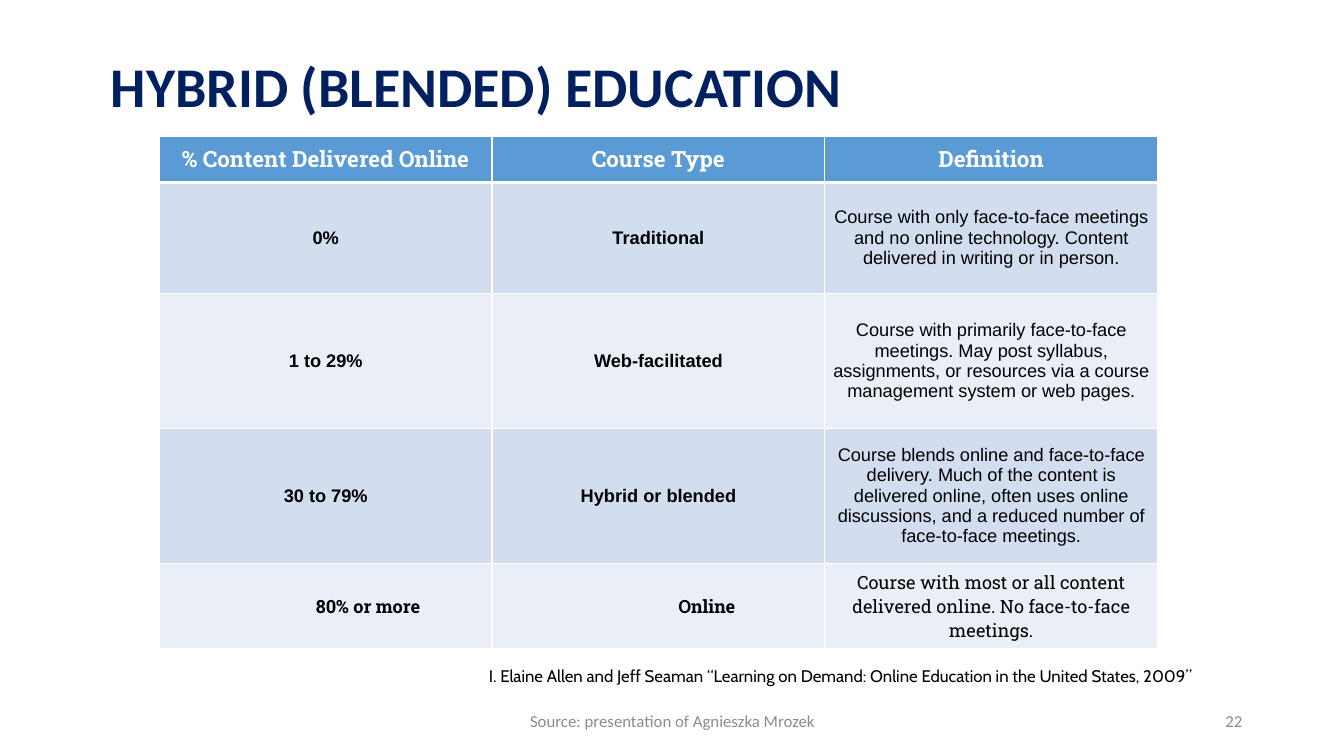
from lxml import etree
from pptx import Presentation
from pptx import util as u
from pptx.dml.color import RGBColor
from pptx.enum import text
from pptx.oxml import ns

WIDTH, HEIGHT = 13.33, 7.5
TITLE = "HYBRID (BLENDED) EDUCATION"
HEADINGS = ("% Content Delivered Online", "Course Type", "Definition")
COURSES = [
    ("0%", "Traditional",
     "Course with only face-to-face meetings and no online technology. "
     "Content delivered in writing or in person."),
    ("1 to 29%", "Web-facilitated",
     "Course with primarily face-to-face meetings. May post syllabus, assignments, "
     "or resources via a course management system or web pages."),
    ("30 to 79%", "Hybrid or blended",
     "Course blends online and face-to-face delivery. Much of the content is delivered "
     "online, often uses online discussions, and a reduced number of face-to-face meetings."),
    ("80% or more", "Online",
     "Course with most or all content delivered online. No face-to-face meetings."),
]
ROW_HEIGHTS = (0.46, 1.1, 1.34, 1.34, 0.85)
COLUMN_WIDTH = 3.3
LAST_ROW_INDENTS = (0.84, 0.96, 0)
CELL_INSET = 0.05
HEADING_FILL, BAND_FILLS = "5B9BD5", ("D2DEEF", "EAEFF7")
LEFT, CENTER, RIGHT = text.PP_ALIGN.LEFT, text.PP_ALIGN.CENTER, text.PP_ALIGN.RIGHT

# words, (left, top, width, height), alignment, font, colour
CITATION = ("I. Elaine Allen and Jeff Seaman “Learning on Demand: "
            "Online Education in the United States, 2009”",
            (4.75, 6.55, 7.67, 0.3), LEFT, "Cabin", "000000")
NUMBER = ("22", (9.42, 6.95, 3, 0.4), RIGHT, "Calibri", "8C8C8C")
SOURCE = ("Source: presentation of Agnieszka Mrozek",
          (4.42, 6.95, 4.5, 0.4), CENTER, "Calibri", "8C8C8C")


def rgb(code):
    return RGBColor.from_string(code)


def inches(box):
    return [u.Inches(length) for length in box]


def write(frame, words, align, font, size, color, bold=False):
    frame.word_wrap = True
    frame.vertical_anchor = text.MSO_ANCHOR.MIDDLE
    paragraph = frame.paragraphs[0]
    paragraph.alignment = align
    run = paragraph.add_run()
    run.text = words
    for name, value in dict(name=font, size=u.Pt(size), bold=bold).items():
        setattr(run.font, name, value)
    run.font.color.rgb = rgb(color)


def border(cell, bottom):
    """Draw white cell borders, 1 pt except for the bottom one."""
    properties = cell._tc.get_or_add_tcPr()
    sides = {"lnL": 1, "lnR": 1, "lnT": 1, "lnB": bottom}
    for place, (side, points) in enumerate(sides.items()):
        line = etree.Element(ns.qn("a:" + side), w=str(u.Pt(points)))
        fill = etree.SubElement(line, ns.qn("a:solidFill"))
        etree.SubElement(fill, ns.qn("a:srgbClr"), val="FFFFFF")
        properties.insert(place, line)


def add_course_table(slide):
    rows = [HEADINGS, *COURSES]
    last = len(rows) - 1
    size = (COLUMN_WIDTH * len(HEADINGS), sum(ROW_HEIGHTS))
    table = slide.shapes.add_table(
        len(rows), len(HEADINGS), *inches((1.58, 1.35, *size))).table
    for column in table.columns:
        column.width = u.Inches(COLUMN_WIDTH)
    for r, (row, height) in enumerate(zip(rows, ROW_HEIGHTS)):
        table.rows[r].height = u.Inches(height)
        heading = r == 0
        for c, words in enumerate(row):
            cell = table.cell(r, c)
            cell.fill.solid()
            cell.fill.fore_color.rgb = rgb(HEADING_FILL if heading else BAND_FILLS[(r - 1) % 2])
            border(cell, bottom=3 if heading else 1)
            for side in ("left", "right", "top", "bottom"):
                setattr(cell, "margin_" + side, u.Inches(CELL_INSET))
            if r == last:
                cell.margin_left = u.Inches(CELL_INSET + LAST_ROW_INDENTS[c])
            cell.vertical_anchor = text.MSO_ANCHOR.MIDDLE
            write(cell.text_frame, words, CENTER,
                  "Roboto Slab" if r in (0, last) else "Arial",
                  16 if heading else 13,
                  "FFFFFF" if heading else "000000",
                  bold=heading or c < 2)


def add_note(slide, words, box, align, font, color):
    note = slide.shapes.add_textbox(*inches(box))
    write(note.text_frame, words, align, font, 12, color)
    return note


def main():
    deck = Presentation()
    deck.slide_width, deck.slide_height = inches((WIDTH, HEIGHT))
    slide = deck.slides.add_slide(deck.slide_layouts[5])

    title = slide.shapes.title
    title.left, title.top, title.width, title.height = inches((1, 0.16, 11.5, 1.45))
    write(title.text_frame, TITLE, LEFT, "Calibri", 40, "002060", bold=True)
    title.text_frame.paragraphs[0].line_spacing = 0.9

    citation = add_note(slide, *CITATION)
    citation.fill.solid()
    citation.fill.fore_color.rgb = rgb("FFFFFF")
    add_course_table(slide)
    for footer in (NUMBER, SOURCE):
        add_note(slide, *footer)
    deck.save("out.pptx")


if __name__ == "__main__":
    main()
